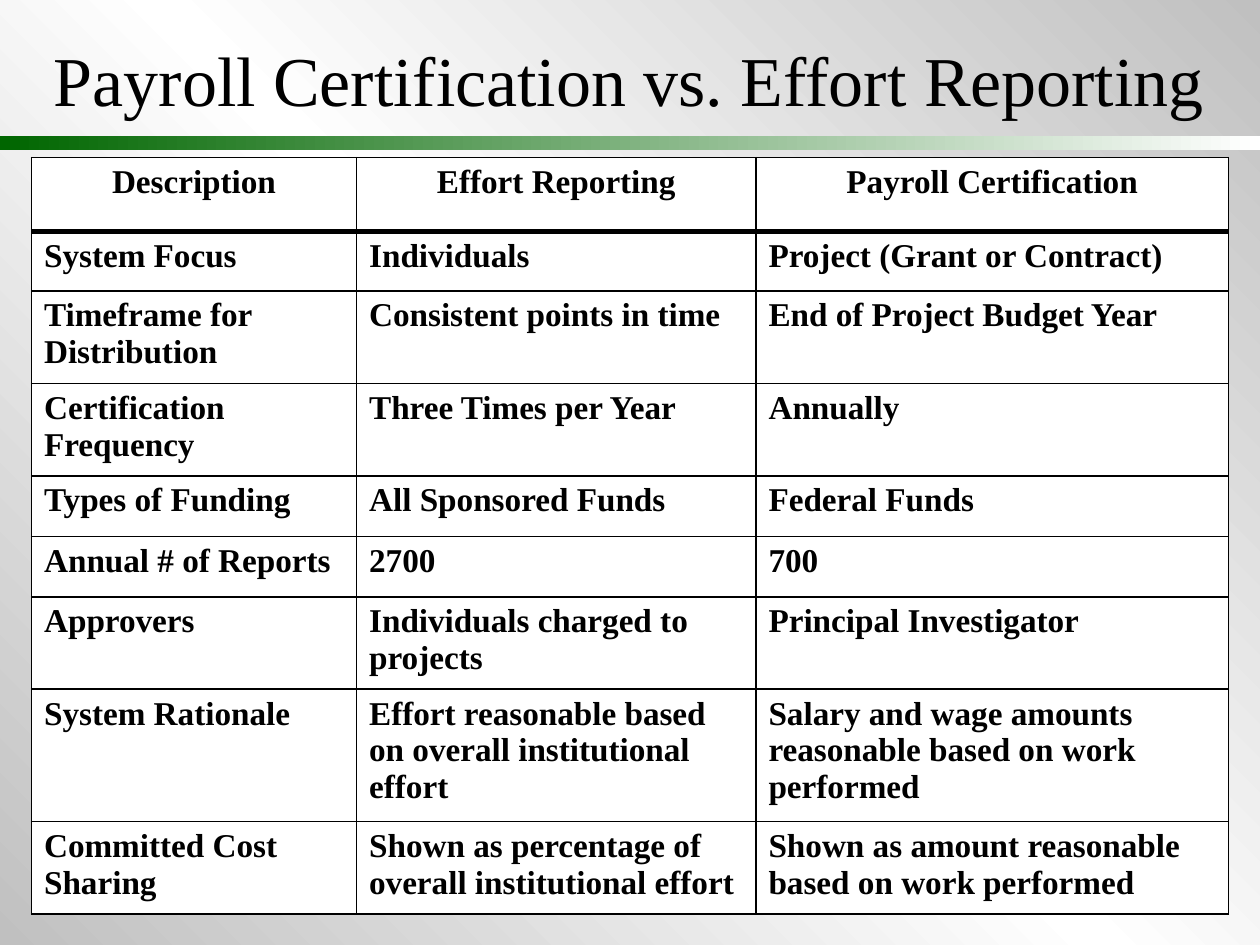
from copy import deepcopy
from typing import NamedTuple

from pptx import Presentation
from pptx.dml.color import RGBColor
from pptx.enum import shapes, text
from pptx.oxml import ns, parse_xml
from pptx.util import Inches, Pt

BLACK = RGBColor(0x00, 0x00, 0x00)
WHITE = RGBColor(0xFF, 0xFF, 0xFF)
SILVER = RGBColor(0xC0, 0xC0, 0xC0)
GREEN = RGBColor(0x00, 0x66, 0x00)
FONT = "Times New Roman"
WIDTHS = (2.58, 3.17, 3.75)


class Row(NamedTuple):
    height: float
    label: str
    effort: str
    payroll: str


ROWS = (
    Row(0.59, "Description", "Effort Reporting", "Payroll Certification"),
    Row(0.47, "System Focus", "Individuals", "Project (Grant or Contract)"),
    Row(0.73, "Timeframe for Distribution", "Consistent points in time",
        "End of Project Budget Year"),
    Row(0.73, "Certification Frequency", "Three Times per Year", "Annually"),
    Row(0.48, "Types of Funding", "All Sponsored Funds", "Federal Funds"),
    Row(0.48, "Annual # of Reports", "2700", "700"),
    Row(0.73, "Approvers", "Individuals charged to projects",
        "Principal Investigator"),
    Row(1.04, "System Rationale",
        "Effort reasonable based on overall institutional effort",
        "Salary and wage amounts reasonable based on work performed"),
    Row(0.73, "Committed Cost Sharing",
        "Shown as percentage of overall institutional effort",
        "Shown as amount reasonable based on work performed"),
)


def style(para, size: float, bold: bool = False) -> None:
    for run in para.runs:
        font = run.font
        font.name, font.size, font.bold = FONT, Pt(size), bold
        font.color.rgb = BLACK


def blend(fill, angle: float, colors: tuple) -> None:
    fill.gradient_angle = angle
    last = len(colors) - 1
    for i, (stop, color) in enumerate(zip(fill.gradient_stops, colors)):
        stop.color.rgb = color
        stop.position = i / last


def border(cell, side: str, width: float) -> None:
    cell._tc.get_or_add_tcPr().append(parse_xml(
        f'<a:ln{side} {ns.nsdecls("a")} w="{Pt(width)}"><a:solidFill>'
        f'<a:srgbClr val="{BLACK}"/></a:solidFill></a:ln{side}>'))


def fill_cell(cell, words: str, head: bool, below: bool) -> None:
    cell.text_frame.text = words
    para = cell.text_frame.paragraphs[0]
    para.alignment = text.PP_ALIGN.CENTER if head else text.PP_ALIGN.LEFT
    style(para, 19, True)
    for side in "LRTB":
        heavy = (head and side == "B") or (below and side == "T")
        border(cell, side, 3 if heavy else 1)
    cell.fill.solid()
    cell.fill.fore_color.rgb = WHITE


def main() -> None:
    deck = Presentation()
    deck.slide_width, deck.slide_height = Inches(10), Inches(7.5)
    slide = deck.slides.add_slide(deck.slide_layouts[6])

    # Background with a third gradient stop
    back = slide.background.fill
    back.gradient()
    stop = next(slide.element.iter(ns.qn("a:gs")))
    stop.addnext(deepcopy(stop))
    blend(back, 45, (SILVER, WHITE, SILVER))

    # Green rule
    rule = slide.shapes.add_shape(shapes.MSO_SHAPE.RECTANGLE, Inches(0),
                                  Inches(1.08), Inches(10), Inches(0.11))
    rule.shadow.inherit = False
    rule.line.fill.background()
    rule.fill.gradient()
    blend(rule.fill, 0, (GREEN, WHITE))

    # Title
    title = slide.shapes.add_textbox(Inches(0.33), Inches(0.25),
                                     Inches(9.67), Inches(0.75))
    frame = title.text_frame
    frame.word_wrap = True
    frame.vertical_anchor = text.MSO_ANCHOR.MIDDLE
    frame.text = "Payroll Certification vs. Effort Reporting"
    style(frame.paragraphs[0], 40)

    # Comparison table
    table = slide.shapes.add_table(
        len(ROWS), len(WIDTHS), Inches(0.25), Inches(1.25),
        Inches(sum(WIDTHS)), Inches(sum(r.height for r in ROWS))).table
    for col, width in zip(table.columns, WIDTHS):
        col.width = Inches(width)
    for i, row in enumerate(ROWS):
        table.rows[i].height = Inches(row.height)
        for j, words in enumerate(row[1:]):
            fill_cell(table.cell(i, j), words, i == 0, i == 1)

    deck.save("out.pptx")


if __name__ == "__main__":
    main()
